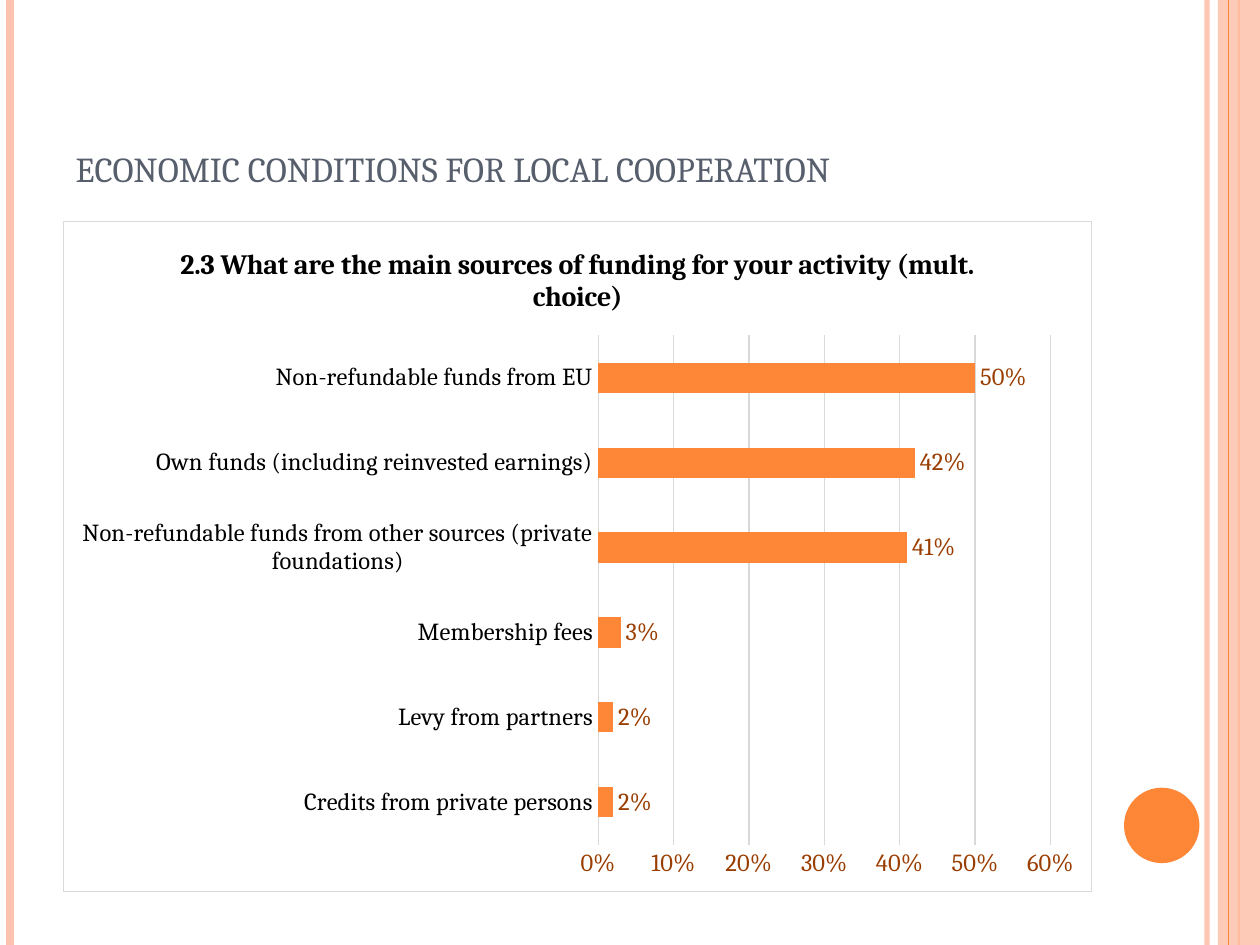
from lxml.etree import SubElement
from pptx import Presentation
from pptx.chart.data import CategoryChartData
from pptx.dml.color import RGBColor
from pptx.enum.chart import XL_CHART_TYPE, XL_LABEL_POSITION, XL_TICK_MARK
from pptx.enum.shapes import MSO_CONNECTOR, MSO_SHAPE
from pptx.enum.text import MSO_ANCHOR, PP_ALIGN
from pptx.oxml import parse_xml
from pptx.oxml.ns import nsdecls, qn
from pptx.util import Cm, Pt

FONT = "Cambria"
ORANGE, PEACH, BROWN = "FE8637", "FEC3AE", "9A3D01"
SLATE, GREY, BLACK, WHITE = "575F6D", "D9D9D9", "000000", "FFFFFF"
SLIDE_W, SLIDE_H = 25.4, 19.05

FUNDING = {
    "Credits from private persons": 0.02,
    "Levy from partners": 0.02,
    "Membership fees": 0.03,
    "Non-refundable funds from other sources (private foundations)": 0.41,
    "Own funds (including reinvested earnings)": 0.42,
    "Non-refundable funds from EU": 0.5,
}


def rgb(code):
    return RGBColor.from_string(code)


def style_font(font, size, color, bold=False):
    font.name, font.size, font.bold = FONT, Pt(size), bold
    font.color.rgb = rgb(color)


def write_text(frame, text, size=14, color=BLACK, bold=False, align=None):
    paragraph = frame.paragraphs[0]
    paragraph.alignment = align
    run = paragraph.add_run()
    run.text = text
    style_font(run.font, size, color, bold)


def style_line(line, color, width=0.75):
    line.color.rgb = rgb(color)
    line.width = Pt(width)


def set_opacity(fill_parent, percent):
    color = next(fill_parent.iter(qn("a:srgbClr")))
    SubElement(color, qn("a:alpha"), val=str(percent * 1000))


def add_stripe(slide, x, color, width, opacity=100):
    """Full-height vertical line."""
    stripe = slide.shapes.add_connector(
        MSO_CONNECTOR.STRAIGHT, Cm(x), 0, Cm(x), Cm(SLIDE_H))
    style_line(stripe.line, color, width)
    properties = stripe._element.spPr
    if opacity < 100:
        set_opacity(properties, opacity)
    SubElement(properties, qn("a:effectLst"))


def add_plain_shape(slide, kind, x, y, width, height, color, opacity=100):
    shape = slide.shapes.add_shape(kind, Cm(x), Cm(y), Cm(width), Cm(height))
    shape.shadow.inherit = False
    shape.fill.solid()
    shape.fill.fore_color.rgb = rgb(color)
    shape.line.fill.background()
    if opacity < 100:
        set_opacity(shape._element.spPr, opacity)


def add_decoration(slide):
    add_stripe(slide, 24.33, PEACH, 3, opacity=93)
    add_stripe(slide, 0.21, PEACH, 4.5)
    add_stripe(slide, 24.98, ORANGE, 1.5)
    add_plain_shape(slide, MSO_SHAPE.RECTANGLE, 24.55, 0, 0.85, SLIDE_H,
                    PEACH, opacity=87)
    add_stripe(slide, 24.77, ORANGE, 0.75)
    add_plain_shape(slide, MSO_SHAPE.OVAL, 22.66, 15.88, 1.52, 1.52, ORANGE)


def add_title(slide, text):
    title = slide.shapes.title
    title.left, title.top = Cm(1.27), Cm(0.76)
    title.width, title.height = Cm(20.75), Cm(3.18)
    title.text_frame.vertical_anchor = MSO_ANCHOR.BOTTOM
    write_text(title.text_frame, text, size=20, color=SLATE,
               align=PP_ALIGN.LEFT)


def frame_chart(chart):
    """White chart area with a thin grey border."""
    area = parse_xml(
        f'<c:spPr {nsdecls("c", "a")}>'
        f'<a:solidFill><a:srgbClr val="{WHITE}"/></a:solidFill>'
        f'<a:ln w="9525"><a:solidFill><a:srgbClr val="{GREY}"/></a:solidFill>'
        '</a:ln></c:spPr>')
    chart._chartSpace.find(qn("c:chart")).addnext(area)


def place_plot(chart, **position):
    """Inner plot area, as fractions of the chart."""
    plot_area = chart._chartSpace.find(".//" + qn("c:plotArea"))
    for old in plot_area.findall(qn("c:layout")):
        plot_area.remove(old)
    modes = {"layoutTarget": "inner", "xMode": "edge", "yMode": "edge"}
    layout = parse_xml(f'<c:layout {nsdecls("c")}><c:manualLayout/></c:layout>')
    for tag, value in {**modes, **position}.items():
        SubElement(layout[0], qn(f"c:{tag}"), val=str(value))
    plot_area.insert(0, layout)


def style_axes(chart):
    categories, shares = chart.category_axis, chart.value_axis
    for axis in (categories, shares):
        axis.major_tick_mark = axis.minor_tick_mark = XL_TICK_MARK.NONE
    style_font(categories.tick_labels.font, 14, BLACK)
    style_line(categories.format.line, GREY)

    shares.minimum_scale, shares.maximum_scale = 0, 0.6
    shares.major_unit = 0.1
    shares.format.line.fill.background()
    style_line(shares.major_gridlines.format.line, GREY)
    style_font(shares.tick_labels.font, 14, BROWN)
    shares.tick_labels.number_format = "0%"
    shares.tick_labels.number_format_is_linked = False


def style_bars(plot):
    plot.gap_width = 182
    plot.vary_by_categories = False
    bars = plot.series[0]
    bars.format.fill.solid()
    bars.format.fill.fore_color.rgb = rgb(ORANGE)
    labels = bars.data_labels
    labels.show_value = True
    labels.position = XL_LABEL_POSITION.OUTSIDE_END
    labels.number_format, labels.number_format_is_linked = "0%", False
    style_font(labels.font, 14, BROWN)


def add_funding_chart(slide, question):
    data = CategoryChartData(number_format="0%")
    data.categories = list(FUNDING)
    data.add_series("Series 1", list(FUNDING.values()))
    chart = slide.shapes.add_chart(
        XL_CHART_TYPE.BAR_CLUSTERED, Cm(1.27), Cm(4.45), Cm(20.75), Cm(13.54),
        data).chart
    style_font(chart.font, 14, BROWN)
    chart.has_legend = False
    chart.has_title = True
    write_text(chart.chart_title.text_frame, question, size=16, bold=True)
    chart.chart_title.include_in_layout = False
    style_axes(chart)
    style_bars(chart.plots[0])
    place_plot(chart, x=0.52, y=0.17, w=0.44, h=0.76)
    frame_chart(chart)


def main():
    deck = Presentation()
    deck.slide_width, deck.slide_height = Cm(SLIDE_W), Cm(SLIDE_H)
    slide = deck.slides.add_slide(deck.slide_layouts[5])
    add_decoration(slide)
    add_title(slide, "ECONOMIC CONDITIONS FOR LOCAL COOPERATION")
    add_funding_chart(
        slide,
        "2.3 What are the main sources of funding for your activity "
        "(mult. choice)")
    deck.save("out.pptx")


if __name__ == "__main__":
    main()
